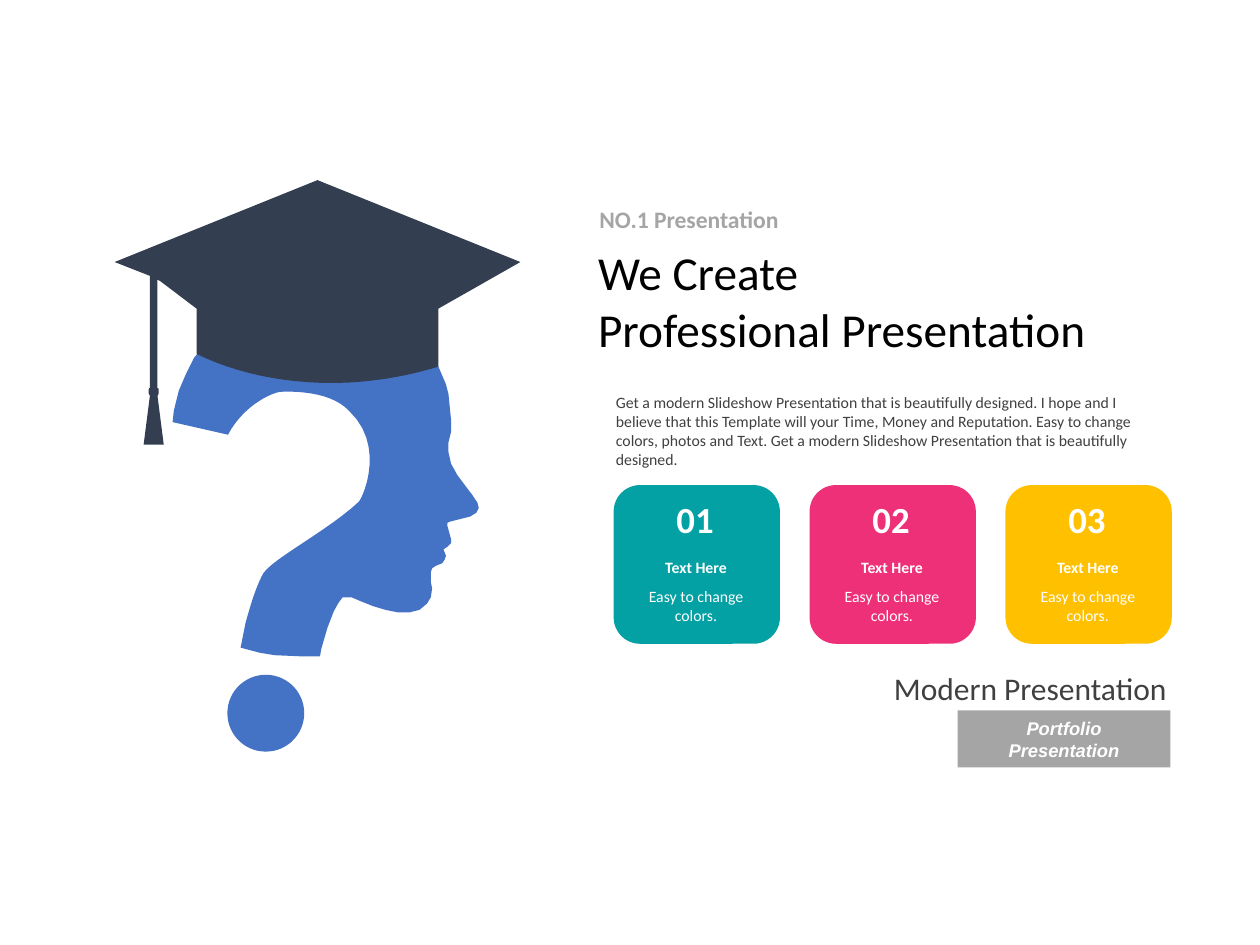
from math import cos, pi, sin

from pptx import Presentation, util as u
from pptx.dml.color import RGBColor
from pptx.enum import shapes, text

# The slide is a grid of 100 columns by 75 rows; boxes are (left, top, width, height)
COLUMNS, ROWS = 100, 75
CELL = u.Inches(0.1)
WHITE, GREY, DARK, BLUE, NAVY = "FFFFFF", "A5A5A5", "404040", "4472C4", "333E50"
LEFT, CENTER, RIGHT = text.PP_ALIGN.LEFT, text.PP_ALIGN.CENTER, text.PP_ALIGN.RIGHT
TOP, MIDDLE = text.MSO_ANCHOR.TOP, text.MSO_ANCHOR.MIDDLE
MARGINS = (0.1, 0.05, 0.1, 0.05)

# Outlines on a 323 by 460 field: a pair is a corner, six numbers are a Bezier curve
FIELD_WIDTH = 323
HEAD = [
    (180, 100), (189, 102), (213, 111), (226, 118), (239, 127), (249, 138), (258, 151),
    (264, 165), (266, 173), (268, 193), (268, 203), (266, 211), (266, 219), (268, 228),
    (273, 237), (279, 245), (285, 253), (289, 259), (290, 263), (288, 267), (283, 270),
    (275, 272), (267, 274), (265, 275), (265, 277), (267, 284), (268, 288), (268, 291),
    (265, 294), (262, 296), (264, 301), (263, 304), (261, 307), (256, 309), (253, 311),
    (252, 314), (252, 322), (253, 327), (252, 334), (249, 339), (243, 344), (235, 346),
    (226, 346), (216, 344), (206, 341), (196, 337), (189, 334), (182, 334), (179, 338),
    (175, 345), (170, 358), (165, 375), (164, 381), (152, 381), (128, 380), (116, 378),
    (101, 374), (105, 354),
    (109, 340, 113, 326, 119, 315), (127, 303, 172, 280, 195, 258),
    (200, 251, 215, 212, 187, 186), (175, 173, 151, 170, 132, 171),
    (122, 173, 102, 184, 91, 205),
    (47, 195), (48, 186), (52, 170), (58, 156), (64, 144), (74, 132), (86, 121),
    (99, 112), (114, 105), (131, 101), (149, 99), (169, 99),
]
DOT = [(121 + 30.5 * cos(pi * step / 30), 426 + 30.5 * sin(pi * step / 30))
       for step in range(60)]
CAP = [
    (162, 3), (1, 68), (29, 79), (29, 168),
    (28, 168, 28, 169, 28, 171), (28, 172, 28, 173, 29, 174),
    (24, 213), (40, 213), (35, 174),
    (36, 173, 36, 172, 36, 171), (36, 169, 36, 168, 35, 168),
    (35, 82), (37, 83), (66, 105), (66, 141),
    (97, 156, 134, 164, 173, 164), (203, 164, 232, 159, 258, 151),
    (258, 105), (323, 68),
]


def color(value):
    return RGBColor.from_string(value)


def cells(box):
    return [round(length * CELL) for length in box]


def share(box, left, top, width, height):
    """The part of a box given by shares of its size."""
    return (box[0] + left * box[2], box[1] + top * box[3], width * box[2], height * box[3])


def paint(shape, fill):
    shape.shadow.inherit = False
    shape.fill.solid()
    shape.fill.fore_color.rgb = color(fill)
    shape.line.fill.background()


def write(shape, words, size, ink, align=LEFT, anchor=TOP, bold=False, italic=False,
          font="Calibri", margins=MARGINS):
    frame = shape.text_frame
    frame.text = words
    frame.word_wrap = True
    frame.auto_size = text.MSO_AUTO_SIZE.NONE
    frame.vertical_anchor = anchor
    (frame.margin_left, frame.margin_top,
     frame.margin_right, frame.margin_bottom) = map(u.Inches, margins)
    for paragraph in frame.paragraphs:
        paragraph.alignment = align
        for run in paragraph.runs:
            run.font.name, run.font.size = font, u.Pt(size)
            run.font.bold, run.font.italic = bold, italic
            run.font.color.rgb = color(ink)


def add_text(slide, box, words, size, ink, **style):
    write(slide.shapes.add_textbox(*cells(box)), words, size, ink, **style)


def flatten(outline, steps=12):
    """Turn the curves of an outline into short straight pieces."""
    points = []
    for part in outline:
        if len(part) == 2:
            points.append(part)
            continue
        start, first, second, end = points[-1], part[:2], part[2:4], part[4:]
        for step in range(1, steps + 1):
            t = step / steps
            weights = ((1 - t) ** 3, 3 * t * (1 - t) ** 2, 3 * t * t * (1 - t), t ** 3)
            points.append(tuple(
                sum(weight * point[axis]
                    for weight, point in zip(weights, (start, first, second, end)))
                for axis in (0, 1)))
    return points


def add_outline(slide, box, outlines, fill):
    left, top, width, _ = cells(box)
    unit = width / FIELD_WIDTH
    contours = [[(x * unit, y * unit) for x, y in flatten(outline)] for outline in outlines]
    builder = slide.shapes.build_freeform(*contours[0][0])
    for number, contour in enumerate(contours):
        if number:
            builder.move_to(*contour[0])
        builder.add_line_segments(contour[1:], close=True)
    paint(builder.convert_to_shape(left, top), fill)


def add_illustration(slide, box):
    add_outline(slide, box, [HEAD, DOT], BLUE)
    add_outline(slide, box, [CAP], NAVY)


def add_heading(slide, box):
    add_text(slide, share(box, 0, 0, 1, 0.26), "NO.1 Presentation", 13.5, GREY, bold=True)
    title = slide.shapes.title
    title.left, title.top, title.width, title.height = cells(share(box, 0.01, 0.28, 0.99, 0.72))
    write(title, "We Create\nProfessional Presentation", 27, "000000",
          margins=(0.04, 0, 0.02, 0))


def add_card(slide, box, number, fill):
    card = slide.shapes.add_shape(shapes.MSO_SHAPE.ROUNDED_RECTANGLE, *cells(box))
    paint(card, fill)
    add_text(slide, share(box, 0.21, 0.05, 0.56, 0.32), f"{number:02}", 21, WHITE,
             align=CENTER, anchor=MIDDLE, bold=True)
    add_text(slide, share(box, 0.06, 0.42, 0.87, 0.2), "Text Here", 9, WHITE,
             align=CENTER, bold=True)
    add_text(slide, share(box, 0.06, 0.6, 0.87, 0.32), "Easy to change colors.", 9, WHITE,
             align=CENTER)


def add_cards(slide, box, fills):
    width = 13.2
    pitch = (box[2] - width) / (len(fills) - 1)
    for index, fill in enumerate(fills):
        add_card(slide, (box[0] + index * pitch, box[1], width, box[3]), index + 1, fill)


def add_footer(slide, box):
    add_text(slide, share(box, 0, 0, 1, 0.38), "Modern Presentation", 18, DARK,
             align=RIGHT, anchor=MIDDLE, margins=(0.03, 0, 0.03, 0))
    label = slide.shapes.add_shape(shapes.MSO_SHAPE.RECTANGLE,
                                   *cells(share(box, 0.34, 0.42, 0.66, 0.58)))
    paint(label, GREY)
    write(label, "Portfolio Presentation", 10.5, WHITE, align=CENTER, anchor=MIDDLE,
          bold=True, italic=True, font="Arial")


def main():
    presentation = Presentation()
    presentation.slide_width, presentation.slide_height = COLUMNS * CELL, ROWS * CELL
    slide = presentation.slides.add_slide(presentation.slide_layouts[5])

    # Left: head with graduation cap
    add_illustration(slide, (9, 14, 32.3, 46))

    # Right: heading, introduction, cards and footer
    add_heading(slide, (46.6, 15.8, 46.3, 12.6))
    add_text(slide, (47.9, 30.7, 45, 7.1),
             "Get a modern Slideshow Presentation that is beautifully designed. I hope and "
             "I believe that this Template will your Time, Money and Reputation. Easy to "
             "change colors, photos and Text. Get a modern Slideshow Presentation that is "
             "beautifully designed.", 9, DARK)
    add_cards(slide, (48.7, 38.5, 44.3, 12.6), ["03A1A4", "EE3078", "FFC000"])
    add_footer(slide, (67.3, 53.1, 25.6, 7.8))

    presentation.save("out.pptx")


if __name__ == "__main__":
    main()
